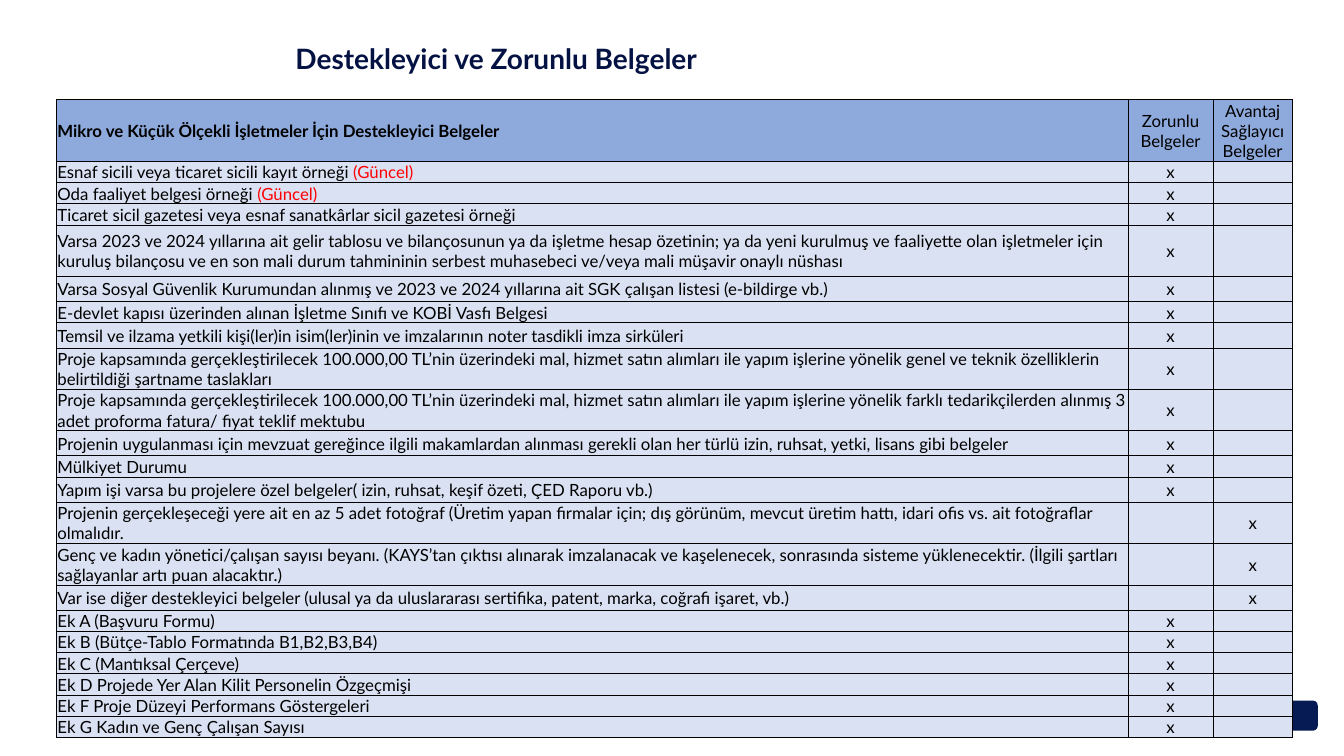
import pptx
import pptx.util
import pptx.oxml
import pptx.dml.color
import pptx.enum.shapes
import pptx.enum.text

Inches, Pt = pptx.util.Inches, pptx.util.Pt
RGBColor = pptx.dml.color.RGBColor
ALIGN = pptx.enum.text.PP_ALIGN
MIDDLE = pptx.enum.text.MSO_ANCHOR.MIDDLE
FIT = pptx.enum.text.MSO_AUTO_SIZE.SHAPE_TO_FIT_TEXT
ROUND = pptx.enum.shapes.MSO_SHAPE.ROUNDED_RECTANGLE

NAVY = RGBColor(0x04, 0x12, 0x43)
BADGE = RGBColor(0x06, 0x1A, 0x53)
BLACK = RGBColor(0, 0, 0)
RED = RGBColor(0xFF, 0, 0)
HEAD = RGBColor(0x8E, 0xA9, 0xDB)
PALE = RGBColor(0xD9, 0xE1, 0xF2)

WIDTHS = (10.63, 0.84, 0.79)
HEADER = ("Mikro ve Küçük Ölçekli İşletmeler İçin Destekleyici Belgeler",
          "Zorunlu Belgeler", "Avantaj Sağlayıcı Belgeler")
NEW = "(Güncel)"
MUST, PLUS = ("x", ""), ("", "x")

# Row height, document, marks
ITEMS = [
    (0.2, "Esnaf sicili veya ticaret sicili kayıt örneği (Güncel)", MUST),
    (0.2, "Oda faaliyet belgesi örneği (Güncel)", MUST),
    (0.2, "Ticaret sicil gazetesi veya esnaf sanatkârlar sicil gazetesi örneği", MUST),
    (0.51, "Varsa 2023 ve 2024 yıllarına ait gelir tablosu ve bilançosunun ya da işletme "
           "hesap özetinin; ya da yeni kurulmuş ve faaliyette olan işletmeler için kuruluş "
           "bilançosu ve en son mali durum tahmininin serbest muhasebeci ve/veya mali "
           "müşavir onaylı nüshası", MUST),
    (0.25, "Varsa Sosyal Güvenlik Kurumundan alınmış ve 2023 ve 2024 yıllarına ait SGK "
           "çalışan listesi (e-bildirge vb.)", MUST),
    (0.2, "E-devlet kapısı üzerinden alınan İşletme Sınıfı ve KOBİ Vasfı Belgesi", MUST),
    (0.25, "Temsil ve ilzama yetkili kişi(ler)in isim(ler)inin ve imzalarının noter "
           "tasdikli imza sirküleri", MUST),
    (0.39, "Proje kapsamında gerçekleştirilecek 100.000,00 TL’nin üzerindeki mal, hizmet "
           "satın alımları ile yapım işlerine yönelik genel ve teknik özelliklerin "
           "belirtildiği şartname taslakları", MUST),
    (0.39, "Proje kapsamında gerçekleştirilecek 100.000,00 TL’nin üzerindeki mal, hizmet "
           "satın alımları ile yapım işlerine yönelik farklı tedarikçilerden alınmış 3 "
           "adet proforma fatura/ fiyat teklif mektubu", MUST),
    (0.25, "Projenin uygulanması için mevzuat gereğince ilgili makamlardan alınması "
           "gerekli olan her türlü izin, ruhsat, yetki, lisans gibi belgeler", MUST),
    (0.2, "Mülkiyet Durumu", MUST),
    (0.25, "Yapım işi varsa bu projelere özel belgeler( izin, ruhsat, keşif özeti, ÇED "
           "Raporu vb.)", MUST),
    (0.39, "Projenin gerçekleşeceği yere ait en az 5 adet fotoğraf (Üretim yapan firmalar "
           "için; dış görünüm, mevcut üretim hattı, idari ofis vs. ait fotoğraflar "
           "olmalıdır.", PLUS),
    (0.39, "Genç ve kadın yönetici/çalışan sayısı beyanı. (KAYS’tan çıktısı alınarak "
           "imzalanacak ve kaşelenecek, sonrasında sisteme yüklenecektir. (İlgili "
           "şartları sağlayanlar artı puan alacaktır.)", PLUS),
    (0.25, "Var ise diğer destekleyici belgeler (ulusal ya da uluslararası sertifika, "
           "patent, marka, coğrafi işaret, vb.)", PLUS),
    (0.2, "Ek A (Başvuru Formu)", MUST),
    (0.2, "Ek B (Bütçe-Tablo Formatında B1,B2,B3,B4)", MUST),
    (0.2, "Ek C (Mantıksal Çerçeve)", MUST),
    (0.2, "Ek D Projede Yer Alan Kilit Personelin Özgeçmişi", MUST),
    (0.2, "Ek F Proje Düzeyi Performans Göstergeleri", MUST),
    (0.2, "Ek G Kadın ve Genç Çalışan Sayısı", MUST),
]


def assign(obj, **values):
    for name, value in values.items():
        setattr(obj, name, value)


class Page:
    def __init__(self, deck):
        self.slide = deck.slides.add_slide(deck.slide_layouts[5])
        self.face = "Lato"
        self.size = Pt(12)

    def label(self, para, text, color=BLACK, **style):
        run = para.add_run()
        run.text = text
        assign(run.font, **{"name": self.face, "size": self.size, **style})
        run.font.color.rgb = color

    def title(self, box, text):
        shape = self.slide.shapes.title
        assign(shape, **dict(zip(("left", "top", "width", "height"), map(Inches, box))))
        frame = shape.text_frame
        assign(frame, word_wrap=True, auto_size=FIT, vertical_anchor=MIDDLE)
        para = frame.paragraphs[0]
        para.alignment = ALIGN.LEFT
        self.label(para, text, NAVY, size=Pt(20), bold=True)

    def badge(self, box):
        shape = self.slide.shapes.add_shape(ROUND, *map(Inches, box))
        shape.shadow.inherit = False
        shape.fill.solid()
        shape.fill.fore_color.rgb = BADGE
        shape.line.fill.background()

    def border(self, cell):
        props = cell._tc.get_or_add_tcPr()
        for side in "LRTB":
            line = pptx.oxml.parse_xml(
                f'<a:ln{side} xmlns:a="http://schemas.openxmlformats.org/drawingml/2006/main" '
                f'w="{Pt(0.5)}"><a:solidFill><a:srgbClr val="{BLACK}"/></a:solidFill></a:ln{side}>')
            props.append(line)

    def cell(self, cell, text, fill, center, bold):
        assign(cell, margin_left=Inches(0.01), margin_right=Inches(0.01),
               margin_top=Inches(0.01), margin_bottom=0, vertical_anchor=MIDDLE)
        self.border(cell)
        cell.fill.solid()
        cell.fill.fore_color.rgb = fill
        para = cell.text_frame.paragraphs[0]
        para.alignment = ALIGN.CENTER if center else ALIGN.LEFT
        if not text:
            # An empty cell keeps its row low only with a small end mark
            para._p.get_or_add_endParaRPr().set("sz", str(int(self.size.pt * 100)))
            return
        plain, new, _ = text.partition(NEW)
        self.label(para, plain, bold=bold)
        if new:
            self.label(para, new, RED, bold=bold)

    def table(self, box, widths, rows):
        """Draw rows of (height, texts); the first row is the header."""
        grid = self.slide.shapes.add_table(len(rows), len(widths), *map(Inches, box)).table
        assign(grid, first_row=False, horz_banding=False)
        for col, width in zip(grid.columns, widths):
            col.width = Inches(width)
        for r, (height, texts) in enumerate(rows):
            grid.rows[r].height = Inches(height)
            for c, text in enumerate(texts):
                self.cell(grid.cell(r, c), text, PALE if r else HEAD,
                          center=c > 0, bold=r == c == 0)


def main():
    deck = pptx.Presentation()
    assign(deck, slide_width=Inches(13.33), slide_height=Inches(7.5))
    page = Page(deck)
    page.badge((12.42, 6.95, 0.65, 0.3))
    page.title((2.83, 0.36, 12.16, 0.44), "Destekleyici ve Zorunlu Belgeler")
    rows = [(0.58, HEADER)] + [(height, (text, *marks)) for height, text, marks in ITEMS]
    page.table((0.56, 0.99, 12.26, 6.27), WIDTHS, rows)
    deck.save("out.pptx")


if __name__ == "__main__":
    main()
